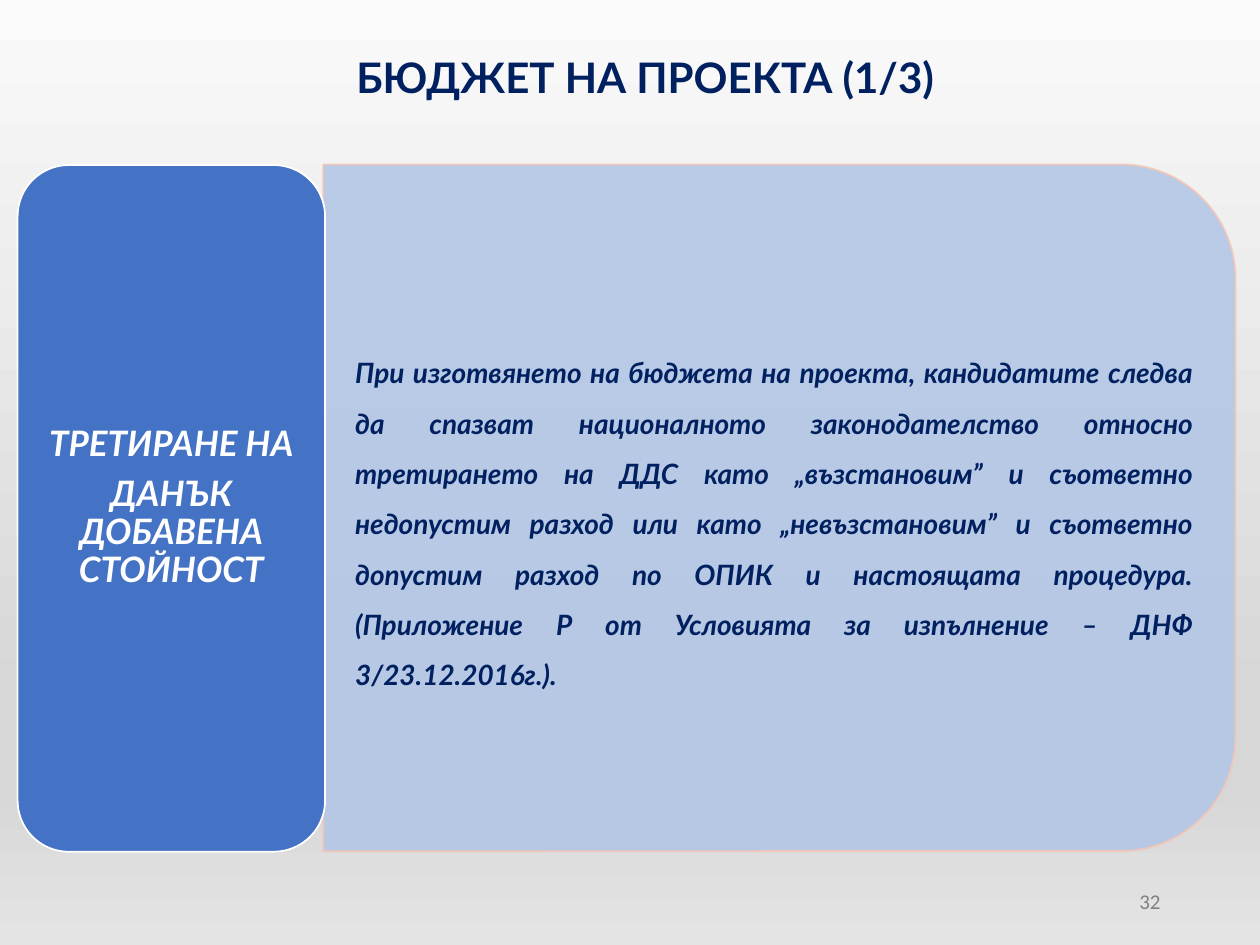
import pptx
import pptx.dml.color
import pptx.enum.shapes
import pptx.enum.text
import pptx.oxml
import pptx.oxml.ns
import pptx.util
from pptx.util import Inches

RGBColor = pptx.dml.color.RGBColor
Pt = pptx.util.Pt
SHAPE = pptx.enum.shapes.MSO_SHAPE
ALIGN = pptx.enum.text.PP_ALIGN
ANCHOR = pptx.enum.text.MSO_ANCHOR
qn = pptx.oxml.ns.qn

NAVY = RGBColor(0x00, 0x20, 0x60)
BLUE = RGBColor(0x44, 0x72, 0xC4)
PALE_BLUE = RGBColor(0xB4, 0xC7, 0xE7)
PEACH = RGBColor(0xF5, 0xC6, 0xB6)
WHITE = RGBColor(0xFF, 0xFF, 0xFF)
GRAY = RGBColor(0x80, 0x80, 0x80)
BACKGROUND_STOPS = [
    (0, RGBColor(0xFA, 0xFA, 0xFA)),
    (74, RGBColor(0xD7, 0xD7, 0xD7)),
    (83, RGBColor(0xD7, 0xD7, 0xD7)),
    (100, RGBColor(0xE4, 0xE4, 0xE4)),
]

TITLE = "БЮДЖЕТ НА ПРОЕКТА (1/3)"
LABEL = ["ТРЕТИРАНЕ НА", "ДАНЪК ДОБАВЕНА СТОЙНОСТ"]
BODY = (
    "При изготвянето на бюджета на проекта, кандидатите следва да спазват "
    "националното законодателство относно третирането на ДДС като "
    "„възстановим” и съответно недопустим разход или като „невъзстановим” "
    "и съответно допустим разход по ОПИК и настоящата процедура. "
    "(Приложение Р от Условията за изпълнение – ДНФ 3/23.12.2016г.)."
)


def set_background(s):
    s.background.fill.gradient()
    grad = s.element.find(".//" + qn("a:gradFill"))
    stops = grad.find(qn("a:gsLst"))
    for stop in list(stops):
        stops.remove(stop)
    for position, color in BACKGROUND_STOPS:
        stop = pptx.oxml.parse_xml(
            f'<a:gs {pptx.oxml.ns.nsdecls("a")} pos="{position * 1000}">'
            f'<a:srgbClr val="{color}"/></a:gs>'
        )
        stops.append(stop)
    grad.find(qn("a:lin")).set("ang", "5400000")


def place(sp, left, top, width, height):
    sp.left, sp.top = Inches(left), Inches(top)
    sp.width, sp.height = Inches(width), Inches(height)


def set_frame(sp, anchor, left=0.1, top=0.05, right=0.1, bottom=0.05):
    tf = sp.text_frame
    tf.word_wrap = True
    tf.auto_size = pptx.enum.text.MSO_AUTO_SIZE.NONE
    tf.vertical_anchor = anchor
    tf.margin_left, tf.margin_right = Inches(left), Inches(right)
    tf.margin_top, tf.margin_bottom = Inches(top), Inches(bottom)
    return tf


def write(p, text, size, color, align, font="Lato", bold=True, italic=False):
    p.alignment = align
    r = p.add_run()
    r.text = text
    r.font.name = font
    r.font.size = Pt(size)
    r.font.bold = bold
    r.font.italic = italic
    r.font.color.rgb = color


def add_panel(s, kind, box, fill, line, opacity=100):
    sp = s.shapes.add_shape(kind, *map(Inches, box))
    sp.shadow.inherit = False
    sp.fill.solid()
    sp.fill.fore_color.rgb = fill
    sp.line.color.rgb = line
    sp.line.width = Pt(1)
    if opacity < 100:
        for color in sp.element.spPr.iter(qn("a:srgbClr")):
            alpha = color.makeelement(qn("a:alpha"), {"val": str(opacity * 1000)})
            color.append(alpha)
    return sp


def add_title(s):
    sp = s.shapes.title
    place(sp, 0.63, 0.36, 8.98, 0.71)
    tf = set_frame(sp, ANCHOR.TOP)
    write(tf.paragraphs[0], TITLE, 24, NAVY, ALIGN.CENTER)


def add_label(s):
    sp = add_panel(s, SHAPE.ROUNDED_RECTANGLE, (0.14, 1.31, 2.44, 5.45), BLUE, WHITE)
    tf = set_frame(sp, ANCHOR.MIDDLE, left=0.08, right=0.08)
    for i, text in enumerate(LABEL):
        p = tf.add_paragraph() if i else tf.paragraphs[0]
        p.line_spacing = 0.9
        p.space_after = Pt(7)
        write(p, text, 20, WHITE, ALIGN.CENTER, italic=True)


def add_body(s):
    sp = s.shapes.add_textbox(*map(Inches, (2.72, 1.3, 6.85, 5.48)))
    tf = set_frame(sp, ANCHOR.TOP, top=1.39)
    p = tf.paragraphs[0]
    p.line_spacing = 1.5
    write(p, BODY, 16, NAVY, ALIGN.JUSTIFY, italic=True)


def add_page_number(s):
    sp = s.shapes.add_textbox(*map(Inches, (7.06, 6.95, 2.25, 0.4)))
    tf = set_frame(sp, ANCHOR.MIDDLE)
    write(tf.paragraphs[0], "32", 12, GRAY, ALIGN.RIGHT, font="Calibri", bold=False)


def main():
    prs = pptx.Presentation()
    prs.slide_width, prs.slide_height = Inches(10), Inches(7.5)
    s = prs.slides.add_slide(prs.slide_layouts[5])
    set_background(s)
    add_title(s)
    panel = add_panel(s, SHAPE.ROUND_2_SAME_RECTANGLE, (3.46, 0.41, 5.45, 7.24),
                      PALE_BLUE, PEACH, opacity=90)
    panel.rotation = 90
    add_label(s)
    add_body(s)
    add_page_number(s)
    prs.save("out.pptx")


if __name__ == "__main__":
    main()
